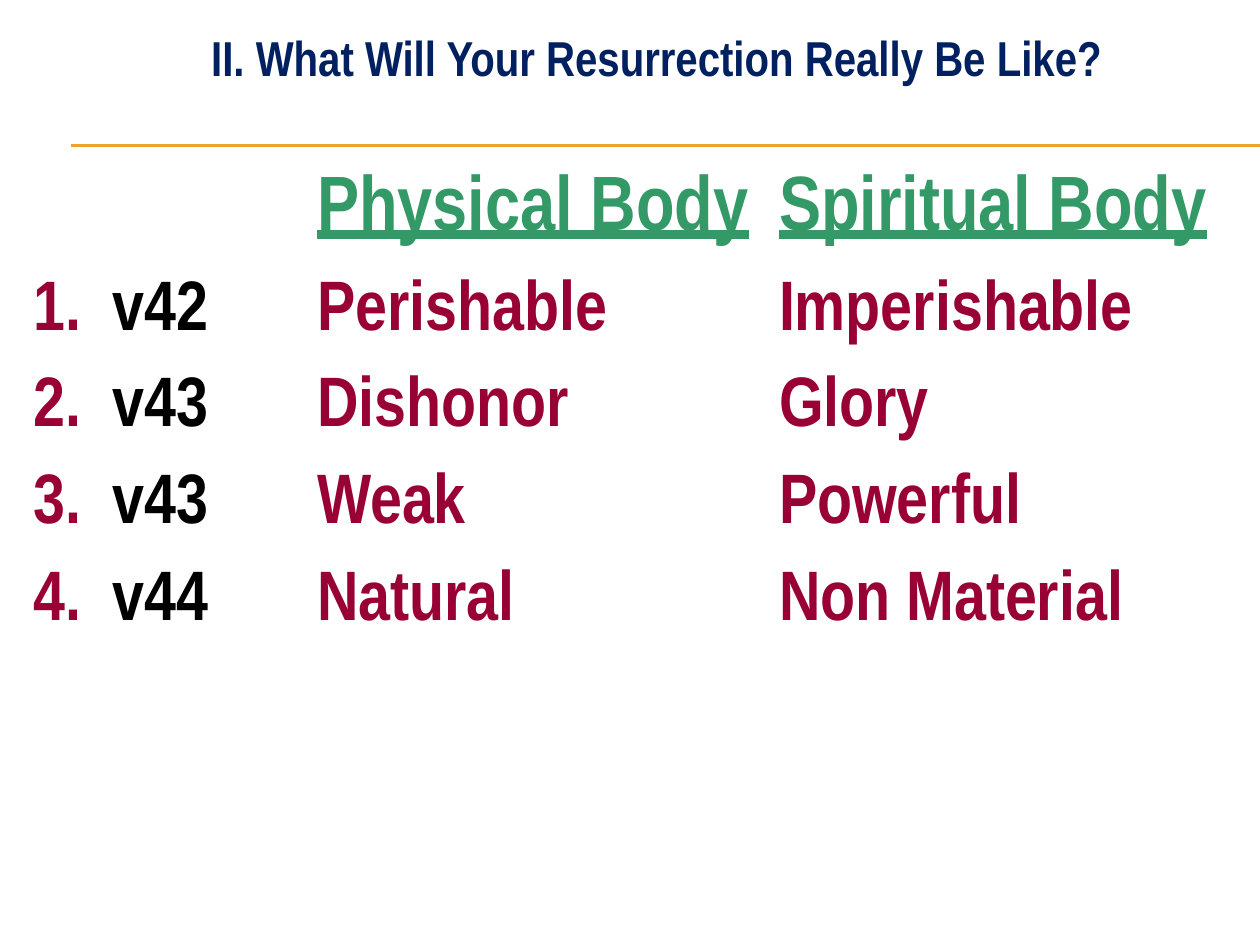
from lxml.etree import SubElement as Sub
from pptx import Presentation
from pptx.dml.color import RGBColor as RGB
from pptx.enum.shapes import MSO_CONNECTOR as Line
from pptx.enum.text import MSO_ANCHOR as Anchor, MSO_AUTO_SIZE as Fit, PP_ALIGN as Align
from pptx.oxml.ns import qn
from pptx.util import Pt

INK = {"navy": "002060", "gold": "F0A22E", "green": "339966",
       "wine": "990033", "black": "000000"}


def write(para, text, size=40, ink="wine", under=False):
    run = para.add_run()
    run.text = text
    font = run.font
    font.name, font.size, font.bold = "Arial Narrow", Pt(size), True
    font.underline = under
    font.color.rgb = RGB.from_string(INK[ink])


deck = Presentation()
deck.slide_width, deck.slide_height = Pt(720), Pt(540)
slide = deck.slides.add_slide(deck.slide_layouts[5])

# Title
title = slide.shapes.title
title.left, title.top, title.width, title.height = Pt(66), Pt(12), Pt(618), Pt(41)
frame = title.text_frame
frame.word_wrap, frame.auto_size = True, Fit.NONE
frame.vertical_anchor = Anchor.TOP
head = frame.paragraphs[0]
head.alignment = Align.CENTER
write(head, "II. What Will Your Resurrection Really Be Like?", size=28, ink="navy")

# Double rule below the title
for y in (82.8, 83.5):
    rule = slide.shapes.add_connector(Line.STRAIGHT, Pt(40.5), Pt(y), Pt(720), Pt(y))
    rule.line.color.rgb = RGB.from_string(INK["gold"])
    rule.line.width = Pt(0.75)
    Sub(rule._element.spPr, qn("a:effectLst"))

# Comparison table
heads = ["Physical Body", "Spiritual Body"]
rows = [("v42", "Perishable", "Imperishable"),
        ("v43", "Dishonor", "Glory"),
        ("v43", "Weak", "Powerful"),
        ("v44", "Natural", "Non Material")]
table = slide.shapes.add_table(len(rows) + 1, 3, Pt(12), Pt(96), Pt(696), Pt(281)).table
table.first_row = table.horz_banding = False
for col, width in zip(table.columns, (162, 264, 270)):
    col.width = Pt(width)
for row in table.rows:
    row.height = Pt(55.25)
table.rows[0].height = Pt(60)
for cell in table.iter_cells():
    cell.fill.background()

for c, text in enumerate(heads, 1):
    write(table.cell(0, c).text_frame.paragraphs[0], text, size=44, ink="green", under=True)

for r, (verse, *words) in enumerate(rows, 1):
    para = table.cell(r, 0).text_frame.paragraphs[0]
    tabs = Sub(para._p.get_or_add_pPr(), qn("a:tabLst"))
    Sub(tabs, qn("a:tab"), pos=str(Pt(45)), algn="l")
    write(para, f"{r}.")
    write(para, f"\t{verse}", ink="black")
    for c, word in enumerate(words, 1):
        write(table.cell(r, c).text_frame.paragraphs[0], word)

deck.save("out.pptx")
